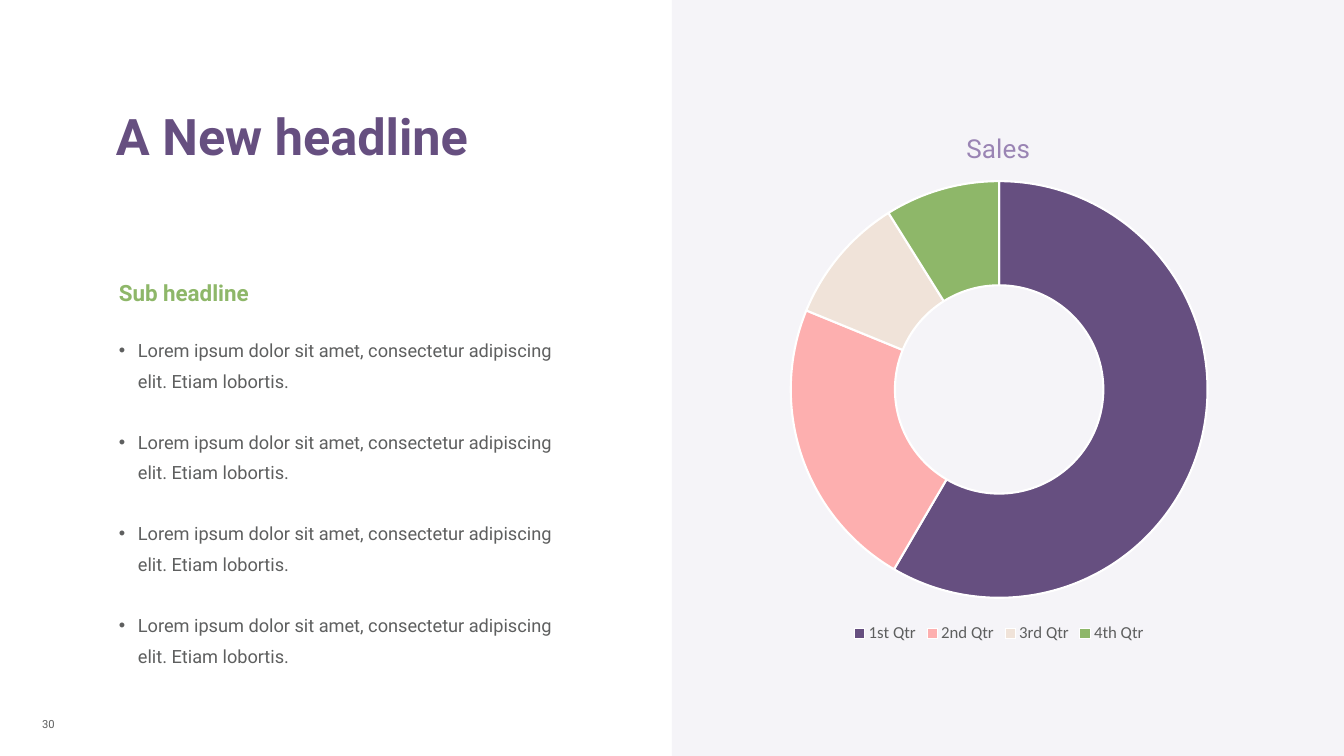
from lxml import etree
from pptx import Presentation
from pptx.chart.data import CategoryChartData
from pptx.dml.color import RGBColor
from pptx.enum.chart import XL_CHART_TYPE as ChartType, XL_LEGEND_POSITION as LegendSide
from pptx.enum.shapes import MSO_SHAPE as Preset
from pptx.enum.text import MSO_AUTO_SIZE as AutoSize
from pptx.oxml import parse_xml
from pptx.oxml.ns import nsdecls, qn
from pptx.util import Inches, Pt

WIDTH, HEIGHT = Inches(13.33), Inches(7.5)
PURPLE, LILAC, GREEN, GREY = "664F80", "9A84B4", "8EB769", "5E5F5F"
QUARTERS = {
    "1st Qtr": (59, PURPLE),
    "2nd Qtr": (23, "FDAFAF"),
    "3rd Qtr": (10, "F0E3D9"),
    "4th Qtr": (9, GREEN),
}
POINTS = ["Lorem ipsum dolor sit amet, consectetur adipiscing elit. Etiam lobortis."] * 4


def rgb(code):
    return RGBColor.from_string(code)


def style(font, size, color, bold=False, face="Roboto"):
    for name, value in {"name": face, "size": Pt(size), "bold": bold}.items():
        setattr(font, name, value)
    font.color.rgb = rgb(color)


def share(left, top, width, height):
    """Turn shares of the slide's size into lengths."""
    return [round(part * full) for part, full in
            zip((left, top, width, height), (WIDTH, HEIGHT) * 2)]


def add_bullet(paragraph):
    props = paragraph._p.get_or_add_pPr()
    props.set("marL", str(Inches(0.19)))
    props.set("indent", str(-Inches(0.19)))
    color = etree.SubElement(props, qn("a:buClr"))
    etree.SubElement(color, qn("a:srgbClr"), val=GREY)
    etree.SubElement(props, qn("a:buFont"), typeface="Arial")
    etree.SubElement(props, qn("a:buChar"), char="•")


def add_text(slide, area, lines, size, color, bold=False, inset=(0.1, 0.05), bullets=False):
    frame = slide.shapes.add_textbox(*share(*area)).text_frame
    side, edge = map(Inches, inset)
    for name, value in {"word_wrap": True, "auto_size": AutoSize.SHAPE_TO_FIT_TEXT,
                        "margin_left": side, "margin_right": side,
                        "margin_top": edge, "margin_bottom": edge}.items():
        setattr(frame, name, value)
    for index, line in enumerate(lines):
        paragraph = frame.add_paragraph() if index else frame.paragraphs[0]
        if bullets:
            paragraph.line_spacing = 1.4
            if index:
                paragraph.space_before = Pt(21.8)
            add_bullet(paragraph)
        run = paragraph.add_run()
        run.text = line
        style(run.font, size, color, bold)


def add_panel(slide, area, color, opacity):
    panel = slide.shapes.add_shape(Preset.RECTANGLE, *share(*area))
    panel.shadow.inherit = False
    panel.fill.solid()
    panel.fill.fore_color.rgb = rgb(color)
    panel.line.fill.background()
    tint = panel._element.spPr.find(".//" + qn("a:srgbClr"))
    etree.SubElement(tint, qn("a:alpha"), val=str(opacity * 1000))


def chart_layout(**values):
    """Place a part of the chart by shares of the chart's size."""
    parts = "".join(f'<c:{name} val="{value}"/>' for name, value in values.items())
    target = '<c:layoutTarget val="inner"/>' if "w" in values else ""
    return parse_xml(f'<c:layout {nsdecls("c")}><c:manualLayout>{target}'
                     '<c:xMode val="edge"/><c:yMode val="edge"/>'
                     f'{parts}</c:manualLayout></c:layout>')


def add_doughnut(slide, area):
    data = CategoryChartData()
    data.categories = list(QUARTERS)
    data.add_series("Series 1", [value for value, _ in QUARTERS.values()])
    chart = slide.shapes.add_chart(ChartType.DOUGHNUT, *share(*area), data).chart
    style(chart.font, 10, PURPLE)

    # Title
    chart.has_title = True
    title = chart.chart_title
    title.text_frame.text = "Sales"
    style(title.text_frame.paragraphs[0].runs[0].font, 18.6, LILAC)
    title.include_in_layout = False
    for layout in title._element.findall(qn("c:layout")):
        title._element.remove(layout)
    title._element.find(qn("c:tx")).addnext(chart_layout(x=0.43, y=0.04))

    # Legend
    chart.has_legend = True
    chart.legend.position = LegendSide.BOTTOM
    chart.legend.include_in_layout = False
    style(chart.legend.font, 12, GREY, face="Calibri")

    # Ring and its slices
    plot = chart.plots[0]
    plot.vary_by_categories = True
    plot._element.find(qn("c:holeSize")).set("val", "75")
    for index, (_, color) in enumerate(QUARTERS.values()):
        slice_format = plot.series[0].points[index].format
        slice_format.fill.solid()
        slice_format.fill.fore_color.rgb = rgb(color)
        slice_format.line.color.rgb = rgb("FFFFFF")
        slice_format.line.width = Pt(1.5)
    plot_area = plot._element.getparent()
    for layout in plot_area.findall(qn("c:layout")):
        plot_area.remove(layout)
    plot_area.insert(0, chart_layout(x=0.11, y=0.14, w=0.78, h=0.77))


def main():
    deck = Presentation()
    deck.slide_width, deck.slide_height = WIDTH, HEIGHT
    slide = deck.slides.add_slide(deck.slide_layouts[6])

    # Right half: tinted panel with the chart
    add_panel(slide, (0.5, 0, 0.5, 1), "EBE7F0", 45)
    add_doughnut(slide, (7.26 / 13.33, 1.04 / 7.5, 5.3 / 13.33, 5.38 / 7.5))

    # Left half: headings, points and page number
    add_text(slide, (1.15 / 13.33, 1.04 / 7.5, 0.3, 0.08), ["A New headline"],
             36, PURPLE, bold=True, inset=(0, 0))
    add_text(slide, (0.081, 2.72 / 7.5, 0.15, 0.05), ["Sub headline"], 16, GREEN, bold=True)
    add_text(slide, (0.081, 3.23 / 7.5, 0.34, 0.5), POINTS, 13, GREY, bullets=True)
    add_text(slide, (0.024, 7.07 / 7.5, 0.13, 0.03), ["30"], 8, GREY)

    deck.save("out.pptx")


if __name__ == "__main__":
    main()
